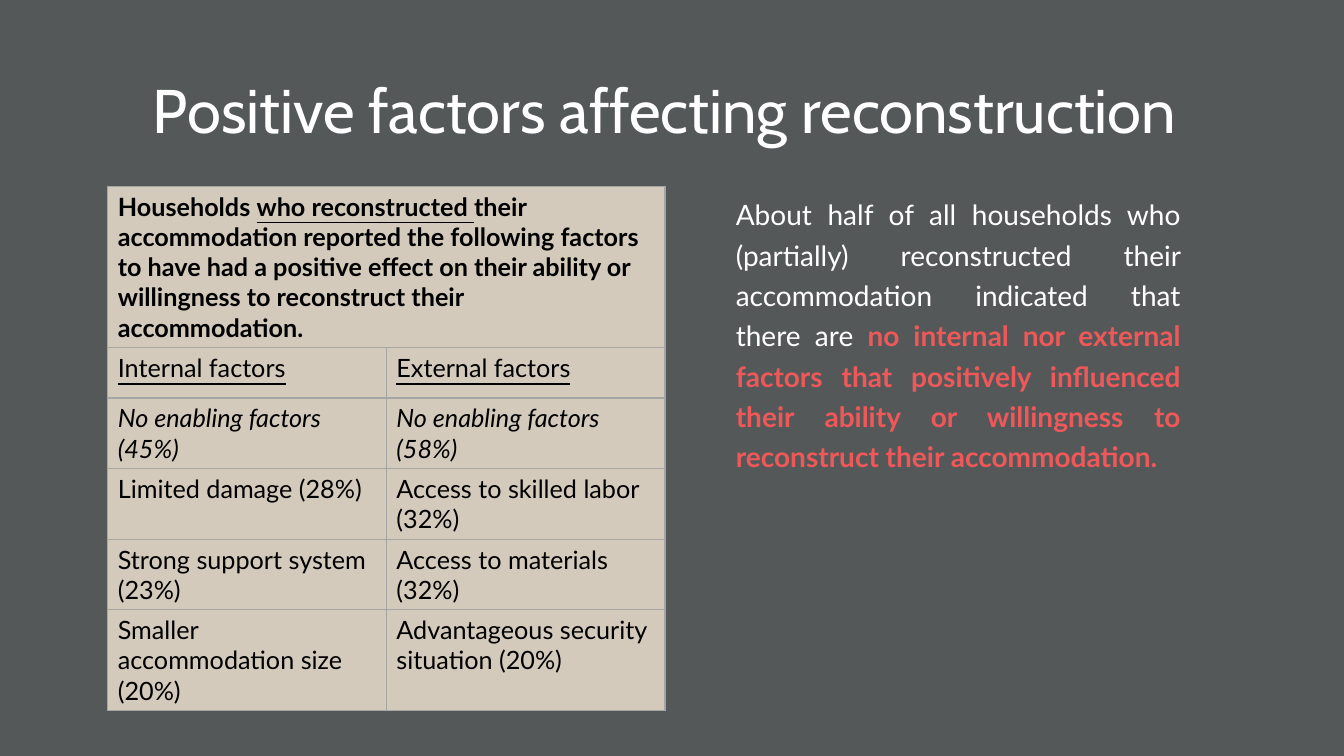
from lxml.etree import SubElement
from pptx import Presentation
from pptx.dml.color import RGBColor
from pptx.enum.text import MSO_ANCHOR, MSO_AUTO_SIZE, PP_ALIGN
from pptx.oxml.ns import qn
from pptx.util import Pt

GREY, SAND, BORDER = "555859", "D4CABB", "A5A5A5"
WHITE, BLACK, RED = "FFFFFF", "000000", "EE5859"

HEADING = [
    ("Households ", False),
    ("who reconstructed ", True),
    ("their accommodation reported the following factors to have had a positive "
     "effect on their ability or willingness to reconstruct their accommodation.", False),
]
FACTORS = [
    ("Internal factors", "External factors"),
    ("No enabling factors (45%)", "No enabling factors (58%)"),
    ("Limited damage (28%)", "Access to skilled labor (32%)"),
    ("Strong support system (23%)", "Access to materials (32%)"),
    ("Smaller accommodation size (20%)", "Advantageous security situation (20%)"),
]
ROW_HEIGHTS = [115.2, 36, 50.4, 50.4, 50.4, 72]


def color(value):
    return RGBColor.from_string(value)


def set_font(font, name, size, value):
    font.name, font.size = name, Pt(size)
    font.color.rgb = color(value)


def place(shape, box):
    shape.left, shape.top, shape.width, shape.height = [Pt(length) for length in box]


def add_title(page, box):
    title = page.shapes.title
    place(title, box)
    title.text_frame.vertical_anchor = MSO_ANCHOR.MIDDLE
    para = title.text_frame.paragraphs[0]
    para.text = "Positive factors affecting reconstruction "
    para.alignment, para.line_spacing = PP_ALIGN.CENTER, 0.9
    set_font(para.font, "Cabin", 44, WHITE)


def style_cell(cell):
    properties = cell._tc.get_or_add_tcPr()
    for side in ("a:lnL", "a:lnR", "a:lnT", "a:lnB"):
        line = SubElement(properties, qn(side), w=str(Pt(1)))
        SubElement(SubElement(line, qn("a:solidFill")), qn("a:srgbClr"), val=BORDER)
    cell.fill.solid()
    cell.fill.fore_color.rgb = color(SAND)
    set_font(cell.text_frame.paragraphs[0].font, "Lato", 18, BLACK)


def add_factor_table(page, box):
    frame = page.shapes.add_table(len(ROW_HEIGHTS), 2, *[Pt(length) for length in box])
    table = frame.table
    table.first_row = table.horz_banding = False
    for row, height in zip(table.rows, ROW_HEIGHTS):
        row.height = Pt(height)
    for cell in table.iter_cells():
        style_cell(cell)

    # Heading across both columns
    table.cell(0, 0).merge(table.cell(0, 1))
    para = table.cell(0, 0).text_frame.paragraphs[0]
    para.font.bold = True
    for text, underlined in HEADING:
        span = para.add_run()
        span.text, span.font.underline = text, underlined

    # Internal and external factors
    for row, texts in enumerate(FACTORS, start=1):
        for column, text in enumerate(texts):
            para = table.cell(row, column).text_frame.paragraphs[0]
            para.add_run().text = text
            para.font.bold = False
            para.font.underline = row == 1
            para.font.italic = row == 2


def add_comment(page, box):
    comment = page.shapes.add_textbox(*[Pt(length) for length in box])
    frame = comment.text_frame
    frame.word_wrap = True
    frame.auto_size = MSO_AUTO_SIZE.SHAPE_TO_FIT_TEXT
    para = frame.paragraphs[0]
    para.alignment, para.line_spacing = PP_ALIGN.JUSTIFY, 1.2
    para.space_after = Pt(12)
    para.font.name, para.font.size = "Lato", Pt(20)
    for text, value, bold in [
        ("About half of all households who (partially) reconstructed their "
         "accommodation indicated that there are ", WHITE, False),
        ("no internal nor external factors that positively influenced their ability "
         "or willingness to reconstruct their accommodation. ", RED, True),
    ]:
        span = para.add_run()
        span.text, span.font.bold = text, bold
        span.font.color.rgb = color(value)


def main():
    deck = Presentation()
    deck.slide_width, deck.slide_height = Pt(960), Pt(540)
    page = deck.slides.add_slide(deck.slide_layouts[5])
    page.background.fill.solid()
    page.background.fill.fore_color.rgb = color(GREY)
    add_title(page, (66, 29, 828, 104))
    add_factor_table(page, (77, 133, 398, 374.4))
    add_comment(page, (518.5, 133, 332, 208))
    deck.save("out.pptx")


if __name__ == "__main__":
    main()
